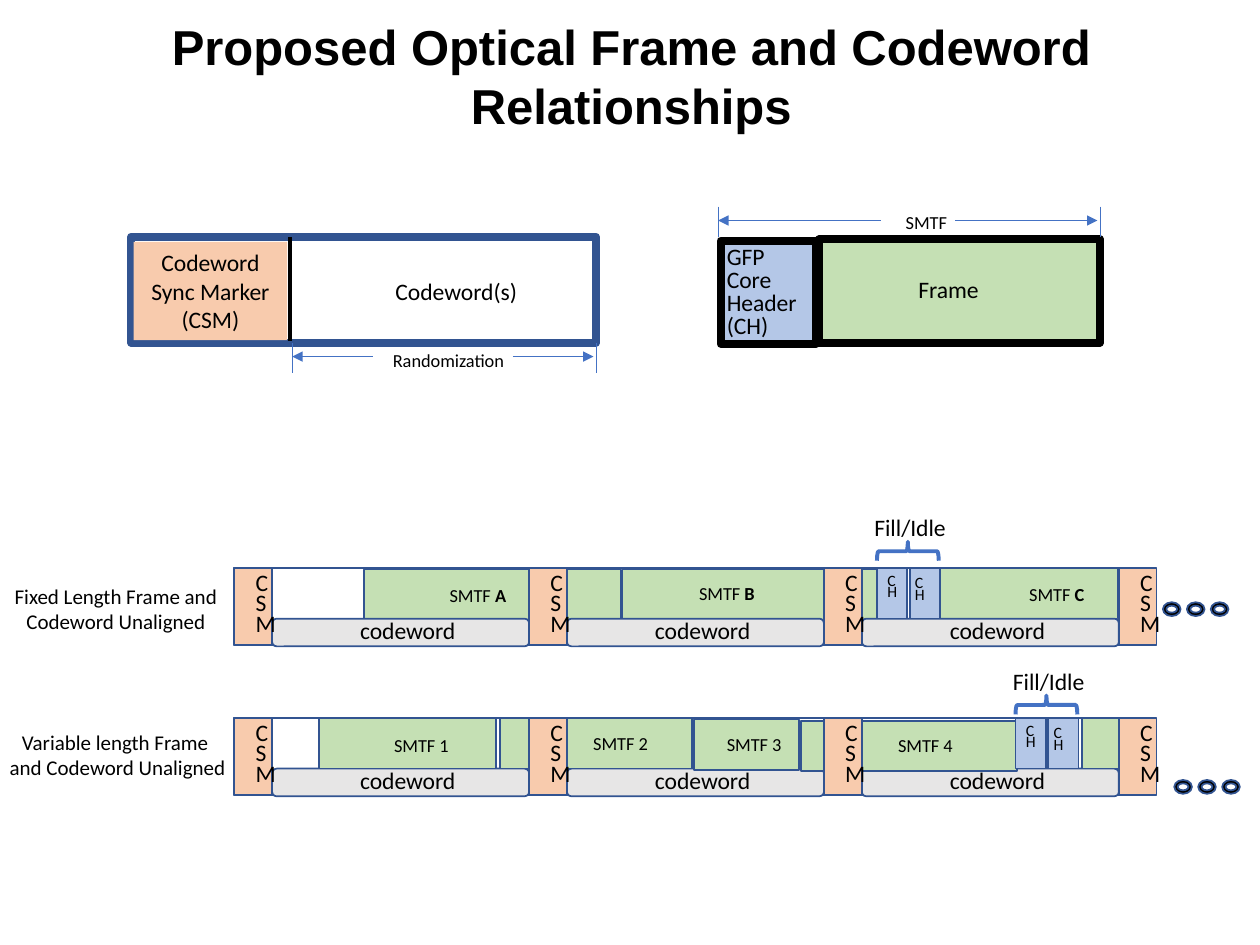
from dataclasses import dataclass

from lxml import etree
from pptx import Presentation
from pptx import util as u
from pptx.dml.color import RGBColor
from pptx.enum import shapes, text
from pptx.oxml.ns import qn

NAVY, BLUE, BLACK = "325491", "4472C4", "000000"
PEACH, GREEN, PALE_BLUE, GREY = "F8CBAD", "C5E0B4", "B4C7E7", "E7E6E6"
SHAPE = shapes.MSO_SHAPE
LEFT, CENTER = text.PP_ALIGN.LEFT, text.PP_ALIGN.CENTER


@dataclass
class Frame:
    """One SMTF piece in a row, with an optional label and its place."""
    x: float
    y: float
    w: float
    label: str = ""
    label_x: float = 0
    label_y: float = 0
    label_w: float = 0.7


@dataclass
class Row:
    """A stream of sync markers, codewords and frames."""
    top: float
    title: list
    title_box: tuple
    frames: list
    header_x: float
    dots_x: float
    dots_y: float
    idle_y: float
    frames_on_top: bool
    bold_names: bool


def color(value: str) -> RGBColor:
    return RGBColor.from_string(value)


def box(s, x: float, y: float, w: float, h: float, fill: str = "",
        line: str = NAVY, weight: float = 1, kind=SHAPE.RECTANGLE):
    sp = s.shapes.add_shape(kind, *map(u.Inches, (x, y, w, h)))
    sp.shadow.inherit = False
    if fill:
        sp.fill.solid()
        sp.fill.fore_color.rgb = color(fill)
    else:
        sp.fill.background()
    if line:
        sp.line.color.rgb = color(line)
        sp.line.width = u.Pt(weight)
    else:
        sp.line.fill.background()
    return sp


def label(s, x: float, y: float, w: float, h: float, lines: list, size: float,
          align=LEFT, spacing: float = 0, wrap: bool = False, font: str = "Calibri",
          bold: bool = False, bold_tail: str = "", grow: bool = True):
    sp = s.shapes.add_textbox(*map(u.Inches, (x, y, w, h)))
    tf = sp.text_frame
    tf.word_wrap = wrap
    tf.auto_size = (text.MSO_AUTO_SIZE.SHAPE_TO_FIT_TEXT if grow
                    else text.MSO_AUTO_SIZE.NONE)
    for i, content in enumerate(lines):
        p = tf.add_paragraph() if i else tf.paragraphs[0]
        p.alignment = align
        p.font.name, p.font.size, p.font.bold = font, u.Pt(size), bold
        p.font.color.rgb = color(BLACK)
        if spacing:
            p.line_spacing = u.Pt(spacing)
        p.add_run().text = content
        if bold_tail:
            r = p.add_run()
            r.text, r.font.bold = bold_tail, True


def line(s, x1: float, y1: float, x2: float, y2: float, hue: str = BLUE,
         weight: float = 0.5, arrow: bool = False):
    c = s.shapes.add_connector(shapes.MSO_CONNECTOR.STRAIGHT,
                               *map(u.Inches, (x1, y1, x2, y2)))
    c.line.color.rgb = color(hue)
    c.line.width = u.Pt(weight)
    if arrow:
        etree.SubElement(c.line._get_or_add_ln(), qn("a:tailEnd"), type="triangle")
    etree.SubElement(c._element.spPr, qn("a:effectLst"))


def span(s, left: float, right: float, top: float, y: float,
         inner_left: float, inner_right: float):
    """Dimension marker: two end ticks and two outward arrows."""
    for x in (left, right):
        line(s, x, top, x, top + 0.24)
    line(s, inner_left, y, left, y, arrow=True)
    line(s, inner_right, y, right - 0.02, y, arrow=True)


def draw_frames(s, row: Row):
    for f in row.frames:
        box(s, f.x, f.y, f.w, 0.4, GREEN)


def draw_codewords(s, row: Row):
    for i in range(3):
        x = 2.16 + 2.34 * i
        box(s, x, row.top + 0.4, 2.04, 0.22, GREY, kind=SHAPE.ROUNDED_RECTANGLE)
        label(s, x + 0.6, row.top + 0.33, 0.97, 0.33, ["codeword"], 13.5)


def draw_row(s, row: Row):
    box(s, 1.86, row.top, 7.02, 0.61)
    label(s, *row.title_box, row.title, 12, CENTER)
    steps = [draw_frames, draw_codewords]
    for step in reversed(steps) if row.frames_on_top else steps:
        step(s, row)
    # Sync markers
    for i in range(4):
        x = 1.86 + 2.34 * i
        box(s, x, row.top, 0.3, 0.61, PEACH)
        label(s, x + 0.07, row.top + 0.01, 0.23, 0.61, ["CSM"], 13.5,
              CENTER, 11.7, wrap=True)
    for f in row.frames:
        if f.label:
            label(s, f.label_x, f.label_y, f.label_w, 0.28,
                  ["SMTF " + ("" if row.bold_names else f.label)], 10.5,
                  wrap=not row.bold_names,
                  bold_tail=f.label if row.bold_names else "")
    # Idle core headers under their brace
    for i in range(2):
        x = row.header_x + 0.26 * i
        box(s, x, row.top, 0.24, 0.4, PALE_BLUE)
        label(s, row.header_x + 0.03 + 0.22 * i, row.top + 0.03 + 0.02 * i,
              0.15, 0.28, ["CH"], 9, spacing=6.5, wrap=True)
    brace = box(s, row.header_x + 0.17, row.idle_y + 0.11, 0.15, 0.49,
                line=BLUE, weight=2.25, kind=SHAPE.LEFT_BRACE)
    brace.rotation = 90
    label(s, row.header_x - 0.12, row.idle_y, 0.78, 0.33, ["Fill/Idle"], 13.5)
    # Continuation dots
    for i in range(3):
        box(s, row.dots_x + 0.19 * i, row.dots_y, 0.14, 0.11, BLACK, kind=SHAPE.DONUT)


ROWS = [
    Row(4.51, ["Fixed Length Frame and", "Codeword Unaligned"], (0.01, 4.58, 1.82, 0.5),
        [Frame(2.89, 4.52, 2.04, "A", 3.47, 4.59),
         Frame(4.94, 4.52, 2.04, "B", 5.45, 4.57),
         Frame(7.45, 4.51, 1.42, "C", 8.07, 4.58)],
        6.96, 9.23, 4.78, 4.02, False, True),
    Row(5.7, ["Variable length Frame", " and Codeword Unaligned"], (-0.07, 5.74, 1.97, 0.5),
        [Frame(2.53, 5.7, 1.41, "1", 3.03, 5.78, 0.87),
         Frame(3.97, 5.7, 0.23),
         Frame(4.5, 5.7, 0.99, "2", 4.61, 5.76),
         Frame(5.51, 5.71, 0.83, "3", 5.67, 5.77),
         Frame(6.36, 5.72, 0.18),
         Frame(6.84, 5.72, 1.23, "4", 7.03, 5.78),
         Frame(8.59, 5.7, 0.31)],
        8.06, 9.32, 6.19, 5.24, True, False),
]


def main():
    prs = Presentation()
    prs.slide_width, prs.slide_height = u.Inches(10), u.Inches(7.5)
    s = prs.slides.add_slide(prs.slide_layouts[6])

    # Title
    label(s, 0.32, 0.08, 9.38, 1.21,
          ["Proposed Optical Frame and Codeword Relationships"], 28, CENTER,
          wrap=True, font="Arial", bold=True, grow=False)

    # Codeword structure
    box(s, 1.04, 1.88, 3.69, 0.84, weight=4.5)
    label(s, 3.04, 2.15, 1.18, 0.33, ["Codeword(s)"], 13.5)
    box(s, 1.06, 1.92, 1.22, 0.78, PEACH, line="")
    label(s, 1.06, 1.92, 1.22, 0.78, ["Codeword", "Sync Marker", "(CSM)"], 13.5,
          CENTER, wrap=True)
    line(s, 2.3, 1.88, 2.3, 2.71, BLACK, 2.25)
    span(s, 2.32, 4.73, 2.72, 2.83, 2.96, 4.07)
    label(s, 3.02, 2.72, 1.1, 0.28, ["Randomization"], 10.5)

    # SMTF structure
    box(s, 6.5, 1.9, 2.23, 0.82, GREEN, BLACK, 4.5)
    label(s, 7.19, 2.13, 0.69, 0.33, ["Frame"], 13.5)
    box(s, 5.72, 1.91, 0.76, 0.82, PALE_BLUE, BLACK, 4.5)
    label(s, 5.67, 1.91, 0.77, 0.83, ["GFP", "Core", "Header", "(CH)"], 13.5, spacing=13.2)
    span(s, 5.7, 8.73, 1.64, 1.75, 6.99, 7.58)
    label(s, 7.09, 1.63, 0.54, 0.28, ["SMTF"], 10.5)

    # Codeword streams
    for row in ROWS:
        draw_row(s, row)
    prs.save("out.pptx")


if __name__ == "__main__":
    main()
